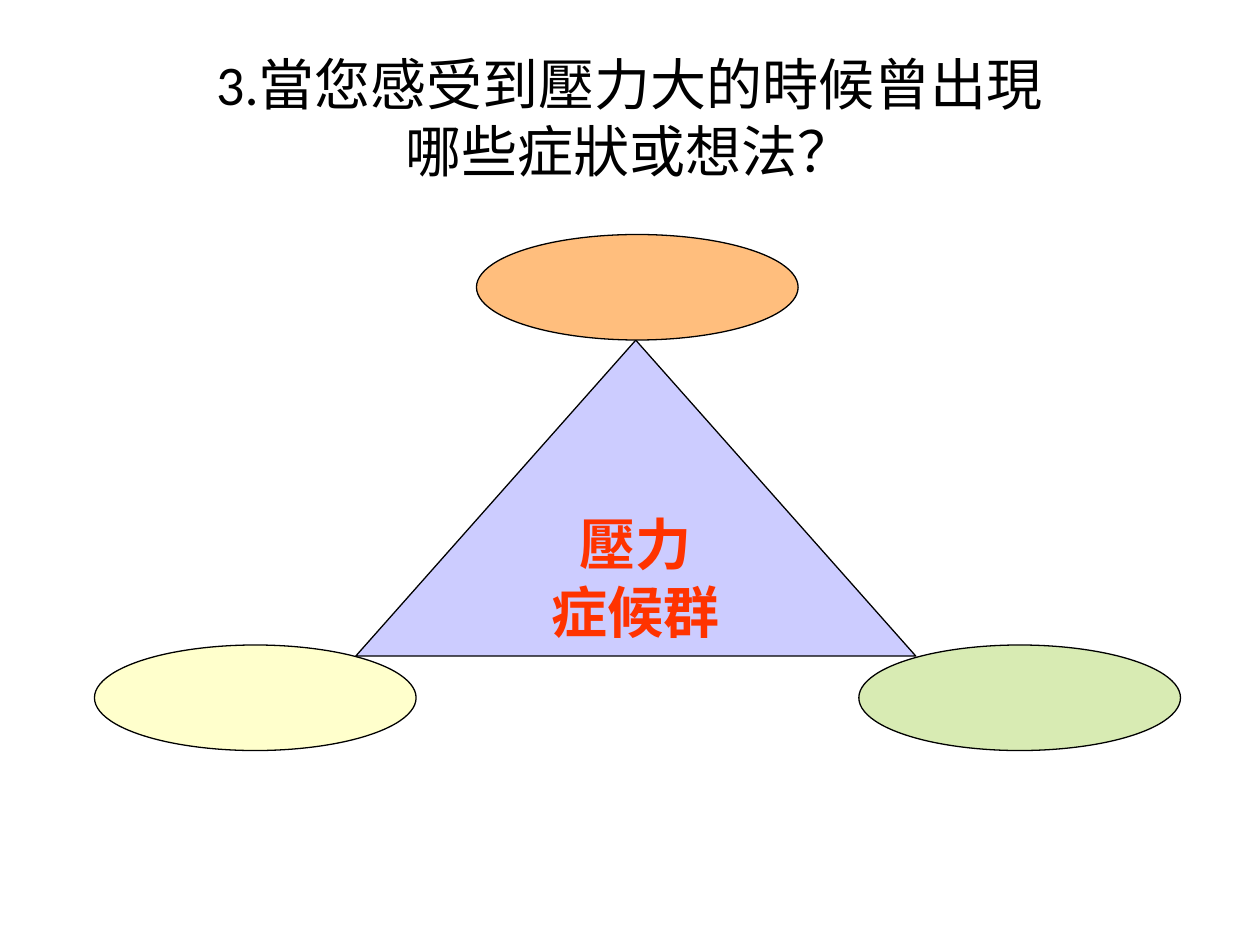
from pptx import Presentation
from pptx.dml.color import RGBColor
from pptx.enum.shapes import MSO_SHAPE
from pptx.enum.text import MSO_ANCHOR, PP_ALIGN
from pptx.util import Pt

TRIANGLE = MSO_SHAPE.ISOSCELES_TRIANGLE
ELLIPSE = MSO_SHAPE.OVAL
MIDDLE = MSO_ANCHOR.MIDDLE
CENTER = PP_ALIGN.CENTER

COLORS = {
    "black": "000000",
    "red": "FF3300",
    "lavender": "CCCCFF",
    "yellow": "FFFFCC",
    "orange": "FFBE7D",
    "green": "D8EBB3",
}


def color(name):
    return RGBColor.from_string(COLORS[name])


class SlideBuilder:
    font_format = {"name": "Calibri", "size": Pt(32)}
    line_width = Pt(0.75)

    def __init__(self, deck):
        self.page = deck.slides.add_slide(deck.slide_layouts[6])

    def fill_text(self, box, lines, ink, bold=False):
        frame = box.text_frame
        frame.word_wrap = True
        frame.vertical_anchor = MIDDLE
        for index, line in enumerate(lines):
            para = frame.add_paragraph() if index else frame.paragraphs[0]
            para.text = line
            para.alignment = CENTER
            for span in para.runs:
                for key, value in {**self.font_format, "bold": bold}.items():
                    setattr(span.font, key, value)
                span.font.color.rgb = color(ink)

    def text(self, left, top, width, height, lines, ink):
        box = self.page.shapes.add_textbox(Pt(left), Pt(top), Pt(width), Pt(height))
        self.fill_text(box, lines, ink)

    def shape(self, kind, left, top, width, height, fill):
        shape = self.page.shapes.add_shape(kind, Pt(left), Pt(top), Pt(width), Pt(height))
        shape.shadow.inherit = False
        shape.fill.solid()
        shape.fill.fore_color.rgb = color(fill)
        shape.line.color.rgb = color("black")
        shape.line.width = self.line_width
        return shape


def main():
    deck = Presentation()
    deck.slide_width, deck.slide_height = Pt(720), Pt(540)
    slide = SlideBuilder(deck)

    # Title, one paragraph with a line break
    slide.text(36, 21.6, 648, 90,
               ["3.當您感受到壓力大的時候曾出現\v哪些症狀或想法？"], "black")

    # Central triangle
    triangle = slide.shape(TRIANGLE, 203.3, 194.4, 320, 180.5, "lavender")
    slide.fill_text(triangle, ["壓力", "症候群"], "red", bold=True)

    # Blank ellipses at the three corners
    for left, top, fill in [(54, 368.6, "yellow"),
                            (272.3, 134, "orange"),
                            (490.8, 368.6, "green")]:
        slide.shape(ELLIPSE, left, top, 183.8, 60.3, fill)

    deck.save("out.pptx")


if __name__ == "__main__":
    main()
